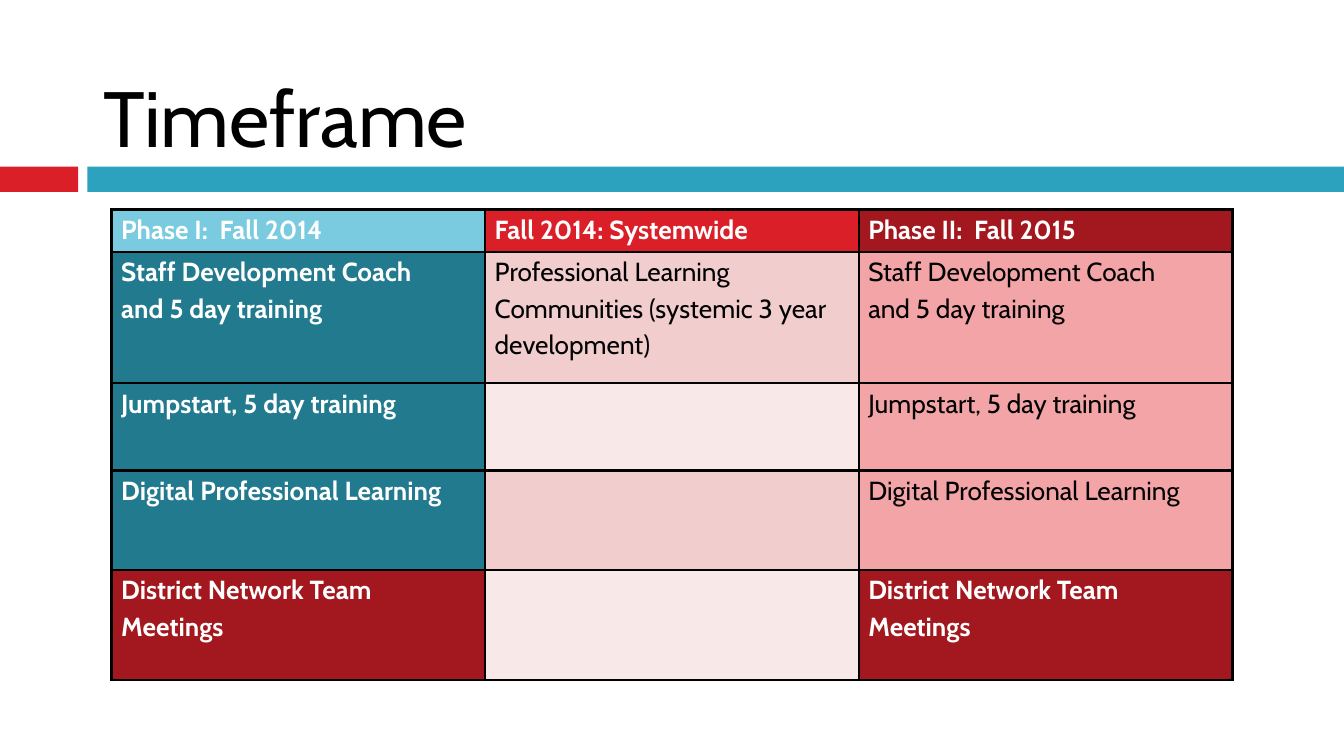
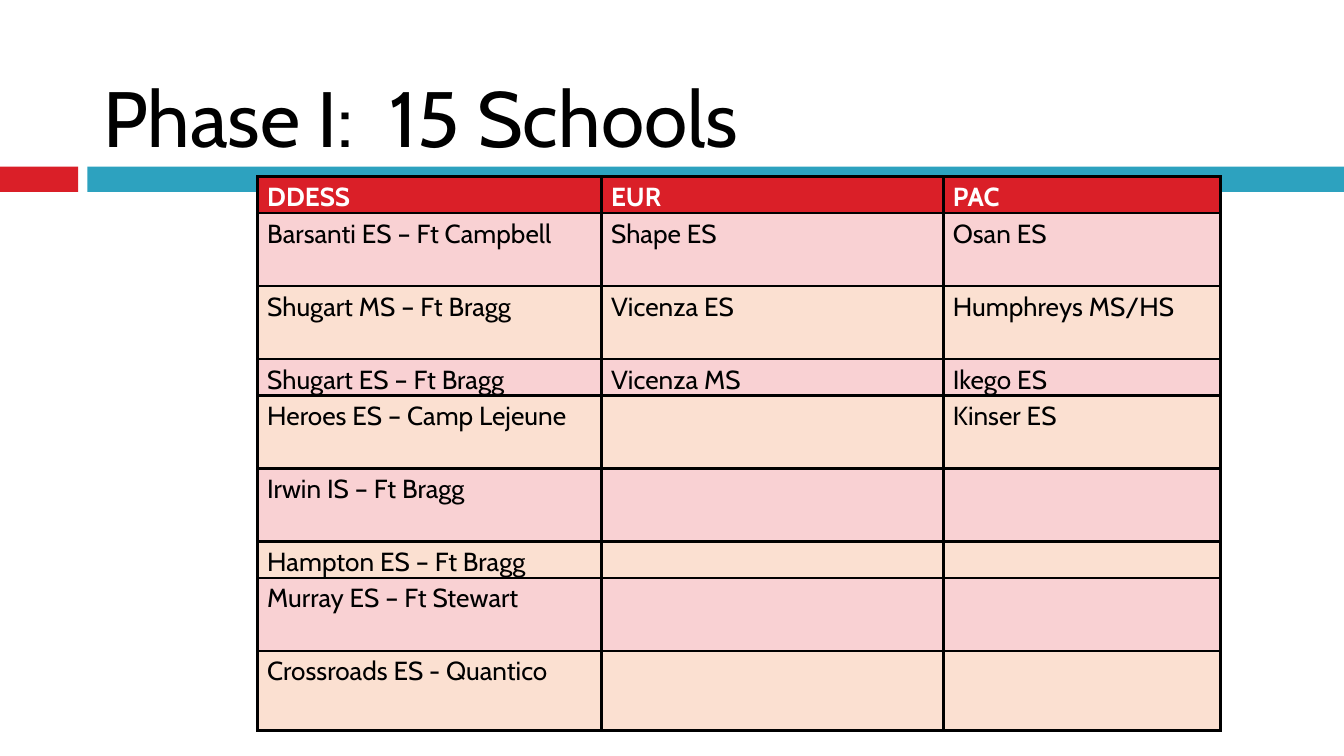
from lxml import etree
from pptx import Presentation
from pptx import util as u
from pptx.dml.color import RGBColor
from pptx.enum import shapes, text
from pptx.oxml.ns import qn

FONT = "Cabin"
BLACK, WHITE = "000000", "FFFFFF"
RED, DARK_RED, ROSE = "DA1F28", "A3171E", "F2A4A7"
BLUE, SKY, TEAL = "2DA2BF", "7ACBE0", "227A8F"
BLUSH, PALE = "F1CDCD", "F8E8E8"
PINK, PEACH = "F9D1D3", "FBE0D1"
STRONG_FILLS = {RED, DARK_RED, SKY, TEAL}


def rgb(value):
    """Turn a hex string into a colour."""
    return RGBColor.from_string(value)


class Deck:
    """Holds the presentation, its style and the current slide."""

    def __init__(self):
        """Start a widescreen presentation."""
        self.prs = Presentation()
        self.prs.slide_width = u.Cm(25.4)
        self.prs.slide_height = u.Cm(14.29)
        self.s = None

    def slide(self, title):
        """Add a slide with the two bands and a title."""
        self.s = self.prs.slides.add_slide(self.prs.slide_layouts[6])
        self.band(0, 1.48, RED)
        self.band(1.65, 23.75, BLUE)
        self.title(title)

    def band(self, left, width, color):
        """Draw one piece of the horizontal band."""
        sp = self.s.shapes.add_shape(
            shapes.MSO_SHAPE.RECTANGLE,
            u.Cm(left), u.Cm(3.15), u.Cm(width), u.Cm(0.48))
        sp.shadow.inherit = False
        sp.fill.solid()
        sp.fill.fore_color.rgb = rgb(color)
        sp.line.fill.background()

    def title(self, words):
        """Write the slide title just above the band."""
        sp = self.s.shapes.add_textbox(
            u.Cm(1.7), u.Cm(0.33), u.Cm(22.66), u.Cm(2.8))
        tf = sp.text_frame
        tf.word_wrap = True
        tf.vertical_anchor = text.MSO_ANCHOR.BOTTOM
        tf.margin_bottom = u.Cm(0.05)
        self.run(tf.paragraphs[0], words, 42, BLACK)

    def run(self, p, words, size, color, bold=False):
        """Add one styled run to a paragraph."""
        r = p.add_run()
        r.text = words
        r.font.name = FONT
        r.font.size = u.Pt(size)
        r.font.bold = bold
        r.font.color.rgb = rgb(color)

    def table(self, left, top, widths, heights, rows, fills):
        """Add a bordered table from rows of words and rows of fills."""
        tbl = self.s.shapes.add_table(
            len(rows), len(widths), u.Cm(left), u.Cm(top),
            u.Cm(sum(widths)), u.Cm(sum(heights))).table
        tbl.first_row = tbl.horz_banding = False
        for col, width in zip(tbl.columns, widths):
            col.width = u.Cm(width)
        for row, height, words, colors in zip(tbl.rows, heights, rows, fills):
            row.height = u.Cm(height)
            for cell, entry, color in zip(row.cells, words, colors):
                self.cell(cell, entry, color)

    def cell(self, cell, words, color, size=14):
        """Style one cell and write a paragraph for each line."""
        cell.margin_left = cell.margin_right = u.Cm(0.18)
        cell.margin_top = cell.margin_bottom = 0
        self.borders(cell)
        cell.fill.solid()
        cell.fill.fore_color.rgb = rgb(color)
        strong = color in STRONG_FILLS
        tf = cell.text_frame
        for i, line in enumerate(words.split("\n")):
            p = tf.add_paragraph() if i else tf.paragraphs[0]
            p.line_spacing = 1.15
            if line:
                self.run(p, line, size, WHITE if strong else BLACK, strong)
            else:
                etree.SubElement(p._p, qn("a:endParaRPr"), sz=str(size * 100))

    def borders(self, cell):
        """Give a cell a thin black line on every side."""
        for side in ("lnL", "lnR", "lnT", "lnB"):
            ln = etree.SubElement(
                cell._tc.get_or_add_tcPr(), qn("a:" + side), w=str(u.Pt(1.5)))
            fill = etree.SubElement(ln, qn("a:solidFill"))
            etree.SubElement(fill, qn("a:srgbClr"), val=BLACK)


def timeframe(deck):
    """Build the slide that compares the phases."""
    deck.slide("Timeframe")
    coach = "Staff Development Coach\nand 5 day training"
    communities = ("Professional Learning Communities "
                   "(systemic 3 year development)")
    steps = ["Jumpstart, 5 day training", "Digital Professional Learning",
             "District Network Team Meetings"]
    rows = [
        ("Phase I:  Fall 2014", "Fall 2014: Systemwide",
         "Phase II:  Fall 2015"),
        (coach, communities, coach),
        *((step, "", step) for step in steps),
    ]
    fills = [
        (SKY, RED, DARK_RED),
        (TEAL, BLUSH, ROSE),
        (TEAL, PALE, ROSE),
        (TEAL, BLUSH, ROSE),
        (DARK_RED, PALE, DARK_RED),
    ]
    deck.table(2.11, 3.96, [7.06] * 3, [0.8, 2.48, 1.65, 1.88, 2.08],
               rows, fills)


def schools(deck):
    """Build the slide that lists the schools by region."""
    deck.slide("Phase I:  15 Schools")
    rows = [
        ("DDESS", "EUR", "PAC"),
        ("Barsanti ES – Ft Campbell", "Shape ES", "Osan ES"),
        ("Shugart MS – Ft Bragg", "Vicenza ES", "Humphreys MS/HS"),
        ("Shugart ES – Ft Bragg", "Vicenza MS", "Ikego ES"),
        ("Heroes ES – Camp Lejeune", "", "Kinser ES"),
        ("Irwin IS – Ft Bragg", "", ""),
        ("Hampton ES – Ft Bragg", "", ""),
        ("Murray ES – Ft Stewart", "", ""),
        ("Crossroads ES - Quantico", "", ""),
    ]
    fills = [[RED] * 3]
    fills += [[PEACH if i % 2 else PINK] * 3 for i in range(len(rows) - 1)]
    low, high = 0.69, 1.38
    heights = [low, high, high] * 3
    heights[3:] = [low, high, high, low, high, 1.51]
    deck.table(4.87, 3.34, [6.5, 6.46, 5.24], heights, rows, fills)


def main():
    """Build and save the presentation."""
    deck = Deck()
    timeframe(deck)
    schools(deck)
    deck.prs.save("out.pptx")


if __name__ == "__main__":
    main()
